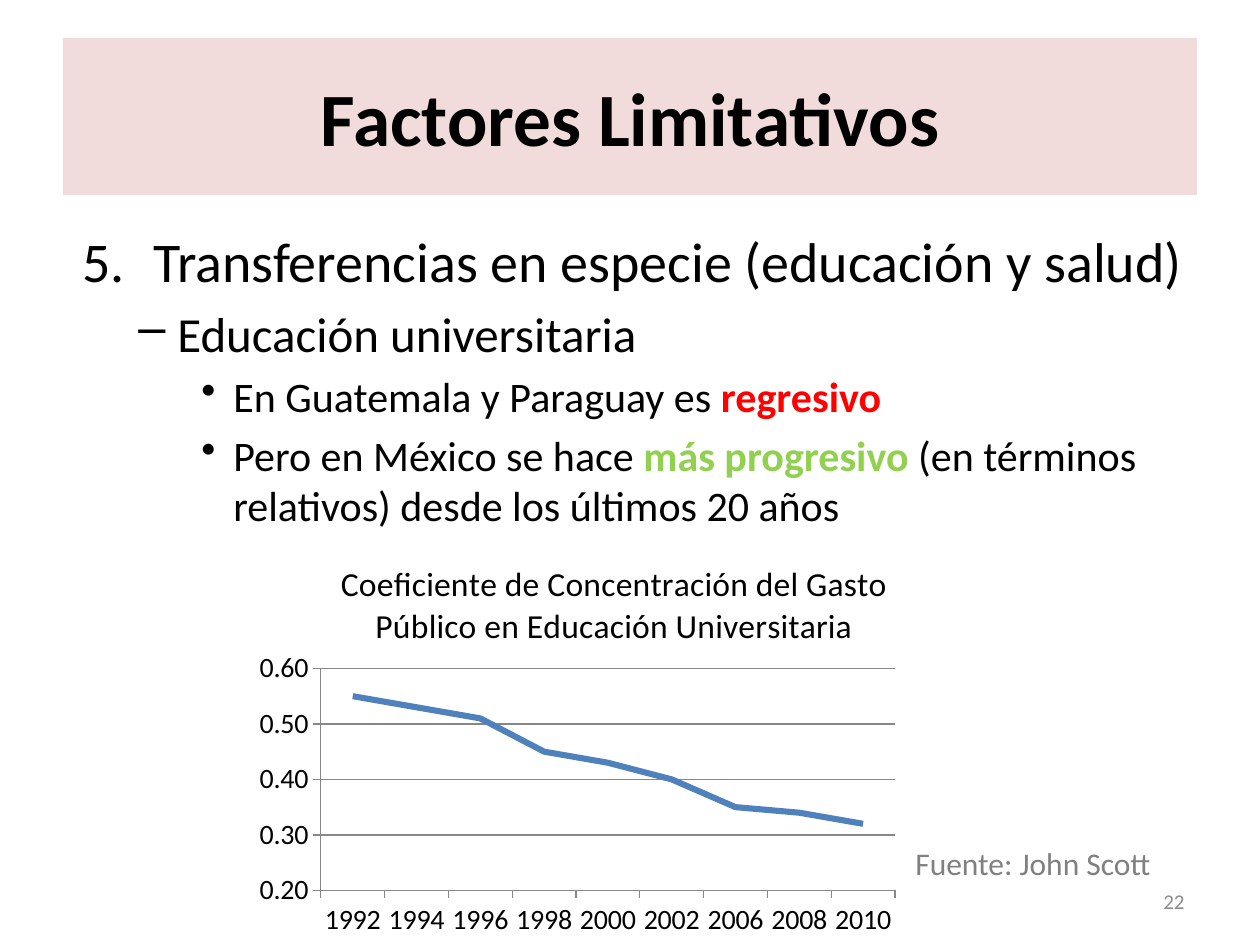
from lxml import etree
from pptx import Presentation
from pptx.chart.data import CategoryChartData
from pptx.dml.color import RGBColor
from pptx.enum.chart import XL_CHART_TYPE, XL_MARKER_STYLE, XL_TICK_MARK
from pptx.enum.shapes import MSO_SHAPE
from pptx.enum.text import MSO_ANCHOR, PP_ALIGN
from pptx.oxml import parse_xml
from pptx.oxml.ns import nsdecls, qn
from pptx.util import Pt

LINE = XL_CHART_TYPE.LINE
NO_MARKER = XL_MARKER_STYLE.NONE
TICK_OUT = XL_TICK_MARK.OUTSIDE
TICK_NONE = XL_TICK_MARK.NONE
RECTANGLE = MSO_SHAPE.RECTANGLE
MIDDLE = MSO_ANCHOR.MIDDLE
CENTER = PP_ALIGN.CENTER
RIGHT = PP_ALIGN.RIGHT

BLACK = RGBColor(0x00, 0x00, 0x00)
PINK = RGBColor(0xF2, 0xDC, 0xDB)
RED = RGBColor(0xFF, 0x00, 0x00)
GREEN = RGBColor(0x92, 0xD0, 0x50)
BLUE = RGBColor(0x4F, 0x81, 0xBD)
AXIS_GRAY = RGBColor(0x87, 0x87, 0x87)
SOURCE_GRAY = RGBColor(0x80, 0x80, 0x80)
NUMBER_GRAY = RGBColor(0x8C, 0x8C, 0x8C)
FONT = "Calibri"

NUMBERED = ("buAutoNum", {"type": "arabicPeriod", "startAt": "5"})
DASH = ("buChar", {"char": "–"})
DOT = ("buChar", {"char": "•"})

POINTS = [
    (0, 32, 78, 71, NUMBERED, [("Transferencias en especie (educación y salud)", None)]),
    (1, 28, 102, 39, DASH, [("Educación universitaria", None)]),
    (2, 24, 158, 32, DOT, [("En Guatemala y Paraguay es ", None), ("regresivo", RED)]),
    (2, 24, 158, 32, DOT, [
        ("Pero en México se hace ", None),
        ("más progresivo ", GREEN),
        ("(en términos relativos) desde los últimos 20 años", None),
    ]),
]

CONCENTRATION = {
    "1992": 0.55, "1994": 0.53, "1996": 0.51, "1998": 0.45, "2000": 0.43,
    "2002": 0.40, "2006": 0.35, "2008": 0.34, "2010": 0.32,
}
PLOT_LAYOUT = {"x": 0.095, "y": 0.319, "w": 0.792, "h": 0.547}


def px(length):
    return round(length * 914400 / 126)


def style_font(font, size, color=BLACK, bold=False):
    font.name = FONT
    font.size = Pt(size)
    font.color.rgb = color
    font.bold = bold


def add_heading(slide, box):
    banner = slide.shapes.add_shape(RECTANGLE, *map(px, box))
    banner.shadow.inherit = False
    banner.fill.solid()
    banner.fill.fore_color.rgb = PINK
    banner.line.fill.background()
    banner.text_frame.vertical_anchor = MIDDLE
    heading = banner.text_frame.paragraphs[0]
    heading.text = "Factores Limitativos"
    heading.alignment = CENTER
    style_font(heading.font, 43, bold=True)


def add_points(slide, box):
    frame = slide.shapes.add_textbox(*map(px, box)).text_frame
    frame.word_wrap = True
    for index, (level, size, margin, hang, bullet, phrases) in enumerate(POINTS):
        point = frame.add_paragraph() if index else frame.paragraphs[0]
        point.level = level
        point.space_before = Pt(size * 0.2)
        style_font(point.font, size)
        for words, accent in phrases:
            phrase = point.add_run()
            phrase.text = words
            style_font(phrase.font, size, accent or BLACK, accent is not None)
        properties = point._p.get_or_add_pPr()
        properties.set("marL", str(px(margin)))
        properties.set("indent", str(-px(hang)))
        tag, attributes = bullet
        marker = etree.Element(qn(f"a:{tag}"), attributes)
        properties.find(qn("a:defRPr")).addprevious(marker)


def set_plot_layout(chart):
    placement = {"layoutTarget": "inner", "xMode": "edge", "yMode": "edge", **PLOT_LAYOUT}
    parts = "".join(f'<c:{tag} val="{value}"/>' for tag, value in placement.items())
    plot_area = chart._chartSpace.chart.plotArea
    for old in plot_area.findall(qn("c:layout")):
        plot_area.remove(old)
    plot_area.insert(0, parse_xml(
        f'<c:layout {nsdecls("c")}><c:manualLayout>{parts}</c:manualLayout></c:layout>'))


def add_concentration_chart(slide, box):
    data = CategoryChartData(number_format="0.00")
    data.categories = list(CONCENTRATION)
    data.add_series("Series 1", list(CONCENTRATION.values()))
    chart = slide.shapes.add_chart(LINE, *map(px, box), data).chart
    style_font(chart.font, 16)
    chart.has_legend = False
    chart.has_title = True
    title = chart.chart_title.text_frame.paragraphs[0]
    title.text = "Coeficiente de Concentración del Gasto Público en Educación Universitaria"
    style_font(title.font, 19.2)
    chart.chart_title.include_in_layout = False

    for axis in (chart.category_axis, chart.value_axis):
        axis.major_tick_mark = TICK_OUT
        axis.minor_tick_mark = TICK_NONE
        axis.format.line.color.rgb = AXIS_GRAY
        axis.format.line.width = Pt(0.75)
    values = chart.value_axis
    values.minimum_scale = 0.2
    values.maximum_scale = 0.6
    values.major_unit = 0.1
    values.has_major_gridlines = True
    values.major_gridlines.format.line.color.rgb = AXIS_GRAY
    values.major_gridlines.format.line.width = Pt(0.75)
    values.tick_labels.number_format = "0.00"
    values.tick_labels.number_format_is_linked = False

    chart.plots[0].vary_by_categories = False
    trend = chart.plots[0].series[0]
    trend.smooth = False
    trend.marker.style = NO_MARKER
    trend.format.line.color.rgb = BLUE
    trend.format.line.width = Pt(3.5)
    set_plot_layout(chart)


def add_note(slide, box, words, size, color, alignment=None, anchor=None):
    frame = slide.shapes.add_textbox(*map(px, box)).text_frame
    frame.word_wrap = True
    frame.vertical_anchor = anchor
    note = frame.paragraphs[0]
    note.text = words
    note.alignment = alignment
    style_font(note.font, size, color)


def main():
    deck = Presentation()
    deck.slide_width = px(1260)
    deck.slide_height = px(945)
    slide = deck.slides.add_slide(deck.slide_layouts[6])
    add_points(slide, (63, 220, 1134, 680))
    add_note(slide, (903, 876, 294, 50), "22", 12, NUMBER_GRAY, RIGHT, MIDDLE)
    add_heading(slide, (63, 38, 1134, 157))
    add_concentration_chart(slide, (252, 539, 725, 406))
    add_note(slide, (903, 838, 381, 50), "Fuente: John Scott", 18, SOURCE_GRAY)
    deck.save("out.pptx")


if __name__ == "__main__":
    main()
